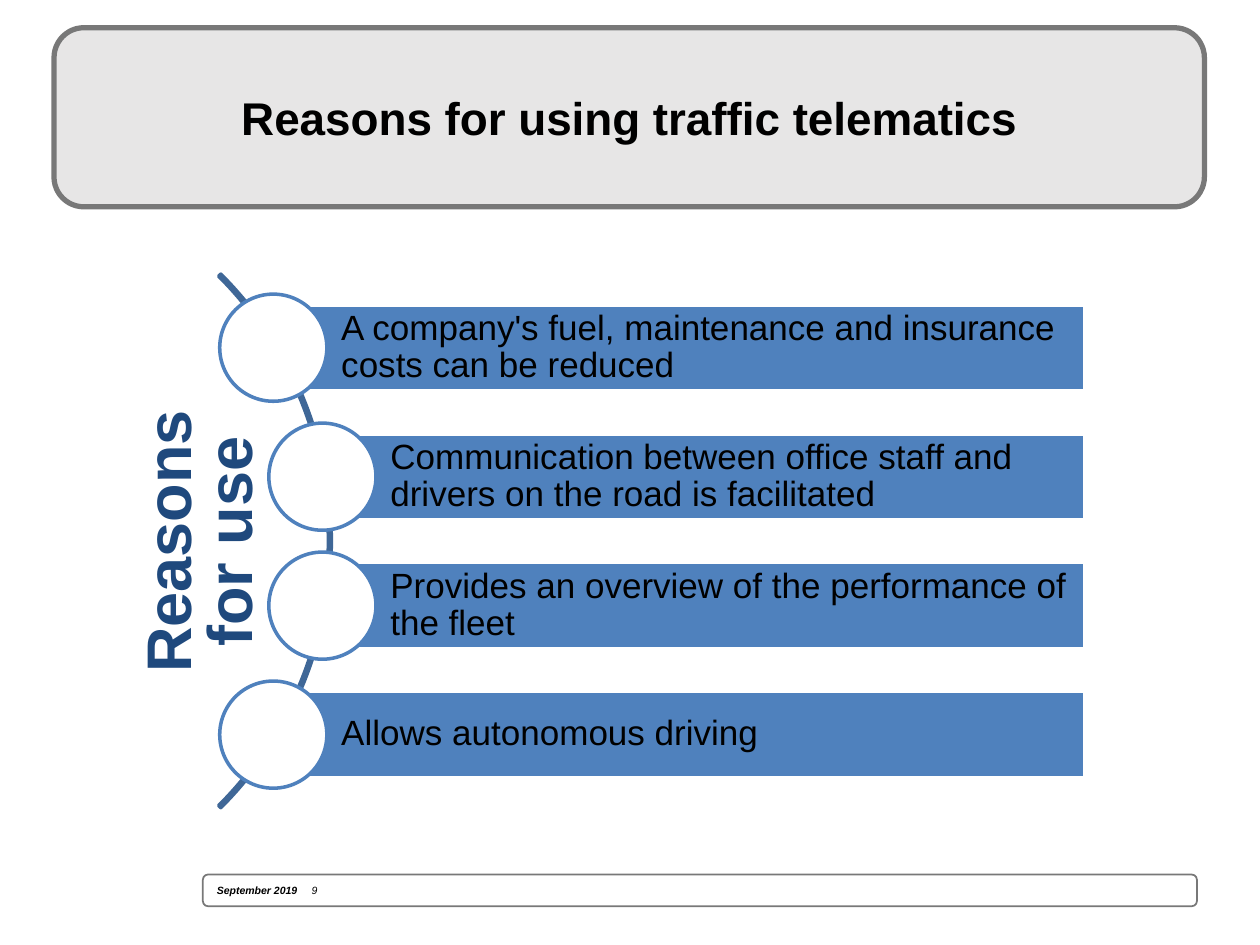
import pptx
import pptx.dml.color
import pptx.enum.shapes
import pptx.enum.text
import pptx.oxml
import pptx.oxml.ns
import pptx.util

Cm, Pt = pptx.util.Cm, pptx.util.Pt
RGBColor = pptx.dml.color.RGBColor
SHAPE = pptx.enum.shapes.MSO_SHAPE
ALIGN = pptx.enum.text.PP_ALIGN

WHITE = RGBColor(0xFF, 0xFF, 0xFF)
BLACK = RGBColor(0x00, 0x00, 0x00)
PALE_GREY = RGBColor(0xE7, 0xE6, 0xE6)
GREY = RGBColor(0x78, 0x78, 0x78)
BLUE = RGBColor(0x4F, 0x81, 0xBD)
ARC_BLUE = RGBColor(0x3F, 0x67, 0x97)
DARK_BLUE = RGBColor(0x1F, 0x49, 0x7D)

REASONS = [
    "A company's fuel, maintenance and insurance costs can be reduced",
    "Communication between office staff and drivers on the road is facilitated",
    "Provides an overview of the performance of the fleet",
    "Allows autonomous driving",
]
BAR_LEFTS = [5.51, 6.5, 6.5, 5.51]
BAR_RIGHT = 21.87
BAR_HEIGHT = 1.73
FIRST_CENTRE = 7.01
PITCH = 2.6
CIRCLE = 2.16

presentation = pptx.Presentation()
presentation.slide_width, presentation.slide_height = Cm(25.4), Cm(19.05)
slide = presentation.slides.add_slide(presentation.slide_layouts[6])


def add_part(kind, left, top, width, height, fill, line, line_width):
    """Add a shadowless shape, measured in cm; no fill when fill is None."""
    part = slide.shapes.add_shape(kind, Cm(left), Cm(top), Cm(width), Cm(height))
    part.shadow.inherit = False
    if fill is None:
        part.fill.background()
    else:
        part.fill.solid()
        part.fill.fore_color.rgb = fill
    part.line.color.rgb = line
    part.line.width = Pt(line_width)
    return part


def write(part, text, size, color, bold=False, align=ALIGN.LEFT, spacing=1.0):
    """Fill a shape with one vertically centred paragraph and return it."""
    frame = part.text_frame
    frame.word_wrap = True
    frame.vertical_anchor = pptx.enum.text.MSO_ANCHOR.MIDDLE
    paragraph = frame.paragraphs[0]
    paragraph.text = text
    paragraph.alignment = align
    paragraph.line_spacing = spacing
    paragraph.font.name = "Arial"
    paragraph.font.size = Pt(size)
    paragraph.font.bold = bold
    paragraph.font.color.rgb = color
    return paragraph


# Footer: date, then the page number at a tab stop
footer = add_part(SHAPE.ROUNDED_RECTANGLE, 4.09, 17.63, 20.04, 0.64, WHITE, GREY, 1)
footer_line = footer.text_frame.paragraphs[0]
tabs = pptx.oxml.parse_xml(
    f'<a:tabLst {pptx.oxml.ns.nsdecls("a")}><a:tab pos="{Cm(1.91)}" algn="l"/></a:tabLst>'
)
footer_line._p.get_or_add_pPr().append(tabs)
write(footer, "September 2019\t", 6, BLACK).font.italic = True
footer_line.runs[0].font.bold = True
footer_line.add_run().text = "9"

title = add_part(SHAPE.ROUNDED_RECTANGLE, 1.09, 0.56, 23.19, 3.61, PALE_GREY, GREY, 3)
write(title, "Reasons for using traffic telematics", 26.2, BLACK, True, ALIGN.CENTER)

# Thin arc behind the list
arc = add_part(SHAPE.BLOCK_ARC, -8.53, 3.3, 15.21, 15.21, None, ARC_BLUE, 2)
for index, value in enumerate((189, 27, 0.004)):
    arc.adjustments[index] = value

# Each bar starts at the centre of its circle
for row, (reason, left) in enumerate(zip(REASONS, BAR_LEFTS)):
    centre = FIRST_CENTRE + row * PITCH
    bar = add_part(SHAPE.RECTANGLE, left, centre - BAR_HEIGHT / 2,
                   BAR_RIGHT - left, BAR_HEIGHT, BLUE, WHITE, 2)
    write(bar, reason, 20, BLACK, spacing=0.9)
    frame = bar.text_frame
    frame.margin_left = Cm(1.37)
    frame.margin_top = frame.margin_right = frame.margin_bottom = Cm(0.15)
    add_part(SHAPE.OVAL, left - CIRCLE / 2, centre - CIRCLE / 2,
             CIRCLE, CIRCLE, WHITE, BLUE, 2)

heading = slide.shapes.add_textbox(Cm(0.43), Cm(10.19), Cm(7.37), Cm(1.45))
heading.rotation = 270
write(heading, "Reasons for use", 36, DARK_BLUE, True, ALIGN.CENTER, 0.8)

presentation.save("out.pptx")
